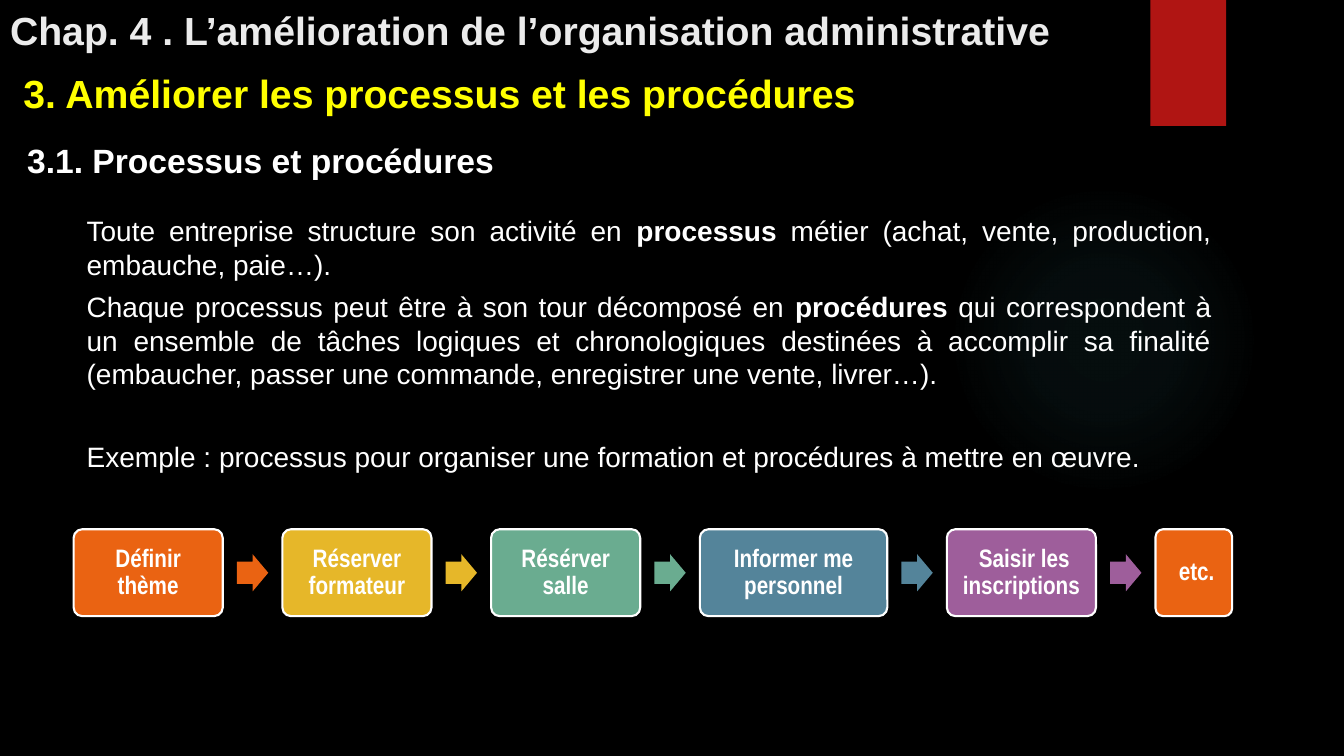
from lxml import etree
from pptx import Presentation
from pptx import util as u
from pptx.dml.color import RGBColor
from pptx.enum import shapes, text
from pptx.oxml import parse_xml
from pptx.oxml.ns import nsdecls, qn

COLORS = {
    "black": "000000", "white": "FFFFFF", "title": "EBEBEB", "yellow": "FFFF00",
    "red": "B01513", "glow": "50B9C1", "orange": "EA6312", "gold": "E6B729",
    "green": "6AAC90", "blue": "54849A", "purple": "9E5E9B",
}
KIND = shapes.MSO_SHAPE
ALIGN = text.PP_ALIGN

prs = Presentation()
prs.slide_width, prs.slide_height = u.Inches(13.33), u.Inches(7.5)
COL, ROW = prs.slide_width / 100, prs.slide_height / 100
s = prs.slides.add_slide(prs.slide_layouts[5])
s.background.fill.solid()
s.background.fill.fore_color.rgb = RGBColor.from_string(COLORS["black"])


def add_block(kind, col, row, cols, rows, color):
    """Add a flat, unlined shape placed on the 100 x 100 grid."""
    sp = s.shapes.add_shape(kind, *map(round, (col * COL, row * ROW, cols * COL, rows * ROW)))
    sp.shadow.inherit = False
    sp.fill.solid()
    sp.fill.fore_color.rgb = RGBColor.from_string(COLORS[color])
    sp.line.fill.background()
    return sp


def add_run(p, words, size, color, bold=True, font="Arial"):
    r = p.add_run()
    r.text = words
    r.font.name, r.font.size, r.font.bold = font, u.Pt(size), bold
    r.font.color.rgb = RGBColor.from_string(COLORS[color])


# Decor: soft glow and red tab
glow = add_block(KIND.OVAL, 70.6, 24.4, 23.1, 41.07, "glow")
stops = "".join(
    f'<a:gs pos="{pos}000"><a:srgbClr val="{COLORS["glow"]}">'
    f'<a:alpha val="{alpha}000"/></a:srgbClr></a:gs>'
    for pos, alpha in ((0, 7), (36, 6), (69, 0), (100, 0)))
gradient = parse_xml(
    f'<a:gradFill {nsdecls("a")}><a:gsLst>{stops}</a:gsLst><a:path path="circle">'
    '<a:fillToRect l="50000" t="50000" r="50000" b="50000"/></a:path></a:gradFill>')
props = glow._element.spPr
props.replace(props.find(qn("a:solidFill")), gradient)
add_block(KIND.RECTANGLE, 85.6, 0, 5.63, 16.67, "red")

# Chapter title
title = s.shapes.title
title.left, title.top = 0, round(0.4 * ROW)
title.width, title.height = round(95.7 * COL), round(7.33 * ROW)
tf = title.text_frame
tf.auto_size, tf.word_wrap = text.MSO_AUTO_SIZE.NONE, True
tf.vertical_anchor = text.MSO_ANCHOR.BOTTOM
p = tf.paragraphs[0]
p.alignment, p.line_spacing = ALIGN.LEFT, 1.5
add_run(p, "Chap. 4 . L’amélioration de l’organisation administrative", 28, "title")

# Section heading
heading = s.shapes.add_textbox(*map(round, (COL, 8.53 * ROW, 65.3 * COL, 7.6 * ROW)))
tf = heading.text_frame
tf.word_wrap, tf.vertical_anchor = True, text.MSO_ANCHOR.MIDDLE
add_run(tf.paragraphs[0], "3. Améliorer les processus et les procédures", 28, "yellow")

# Subheading and body; odd pieces of a paragraph are bold
body = s.shapes.add_textbox(*map(round, (1.28 * COL, 17.87 * ROW, 89.6 * COL, 46 * ROW)))
tf = body.text_frame
tf.word_wrap = True
p = tf.paragraphs[0]
p.space_after = u.Pt(6)
add_run(p, "3.1. Processus et procédures", 24, "white")
PARAGRAPHS = [
    (18, ALIGN.JUSTIFY, ["Toute entreprise structure son activité en ", "processus",
                         " métier (achat, vente, production, embauche, paie…)."]),
    (6, ALIGN.JUSTIFY, ["Chaque processus peut être à son tour décomposé en ", "procédures",
                        " qui correspondent à un ensemble de tâches logiques et chronologiques "
                        "destinées à accomplir sa finalité (embaucher, passer une commande, "
                        "enregistrer une vente, livrer…)."]),
    (35, ALIGN.LEFT, ["Exemple\u00a0: processus pour organiser une formation et procédures "
                      "à mettre en œuvre."]),
]
for before, align, pieces in PARAGRAPHS:
    p = tf.add_paragraph()
    p.alignment, p.space_before = align, u.Pt(before)
    p._p.get_or_add_pPr().set("marL", str(u.Inches(0.59)))
    for i, piece in enumerate(pieces):
        add_run(p, piece, 20, "white", bold=i % 2 == 1)

# Process chain: each step is followed by an arrow of its colour
STEPS = [
    ("Définir thème", "orange", 11.1), ("Réserver formateur", "gold", 11.1),
    ("Résérver salle", "green", 11.1), ("Informer me personnel", "blue", 13.95),
    (" Saisir les inscriptions", "purple", 11.1), (" etc.", "orange", 5.7),
]
GAP = 4.43
col = 5.48
for i, (label, color, cols) in enumerate(STEPS):
    step = add_block(KIND.ROUNDED_RECTANGLE, col, 70, cols, 11.5, color)
    step.adjustments[0] = 0.1
    step.line.color.rgb = RGBColor.from_string(COLORS["white"])
    step.line.width = u.Pt(1.5)
    tf = step.text_frame
    tf.word_wrap, tf.vertical_anchor = True, text.MSO_ANCHOR.MIDDLE
    tf.margin_left = tf.margin_right = tf.margin_top = tf.margin_bottom = u.Inches(0.1)
    p = tf.paragraphs[0]
    p.alignment, p.line_spacing = ALIGN.CENTER, 0.9
    add_run(p, label, 18, "white", font="Arial Narrow")
    col += cols
    if i < len(STEPS) - 1:
        arrow = add_block(KIND.RIGHT_ARROW, col + 1.05, 73.3, 2.33, 4.93, color)
        arrow.adjustments[0] = 0.6
    col += GAP

prs.save("out.pptx")
